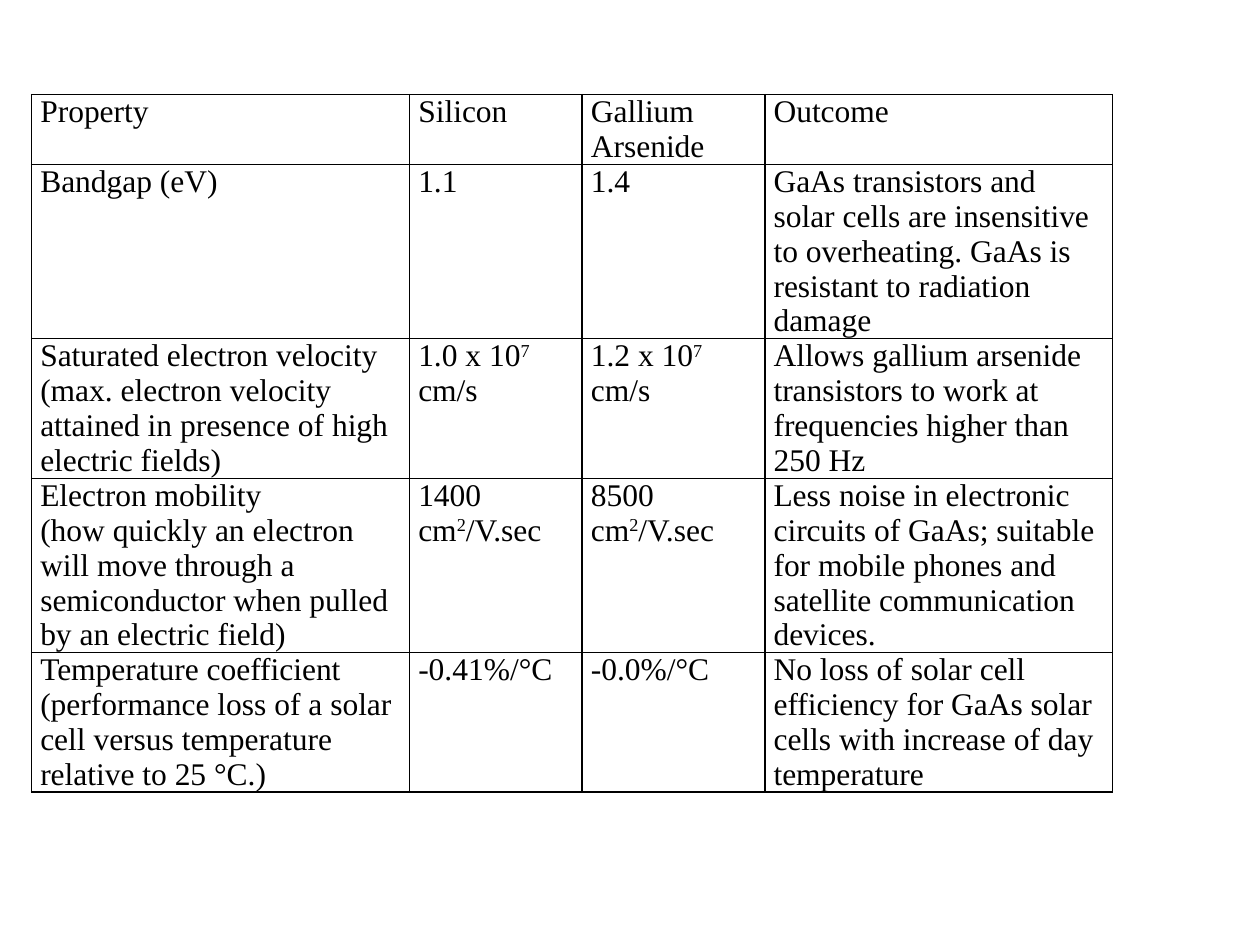
from typing import NamedTuple

from lxml import etree
from pptx import Presentation
from pptx.dml import color as dml
from pptx.oxml import ns
from pptx.util import Inches, Pt

FACE = "Times New Roman"
INK = "000000"
COLS = (3, 1.37, 1.45, 2.76)


class Row(NamedTuple):
    height: float
    name: str
    si: str
    gaas: str
    result: str


# "^" encloses raised text, a line break starts a new paragraph
ROWS = (
    Row(0.54, "Property", "Silicon", "Gallium Arsenide", "Outcome"),
    Row(1.35, "Bandgap (eV)", "1.1", "1.4",
        "GaAs transistors and solar cells are insensitive to overheating. "
        "GaAs is resistant to radiation damage"),
    Row(1.08, "Saturated electron velocity\n(max. electron velocity attained "
        "in presence of high electric fields)",
        "1.0 x 10^7 ^cm/s", "1.2 x 10^7 ^cm/s",
        "Allows gallium arsenide transistors to work at frequencies "
        "higher than 250 Hz"),
    Row(1.35, "Electron mobility\n(how quickly an electron will move through "
        "a semiconductor when pulled by an electric field)",
        "1400 cm^2^/V.sec", "8500 cm^2^/V.sec",
        "Less noise in electronic circuits of GaAs; suitable for mobile "
        "phones and satellite communication devices."),
    Row(1.08, "Temperature coefficient\n(performance loss of a solar cell "
        "versus temperature relative to 25 °C.)",
        "-0.41%/°C", "-0.0%/°C",
        "No loss of solar cell efficiency for GaAs solar cells with "
        "increase of day temperature"),
)


def rgb(code: str) -> dml.RGBColor:
    return dml.RGBColor.from_string(code)


def write(para, line: str) -> None:
    """Fill a paragraph, raising every part between carets."""
    font = para.font
    font.name, font.size = FACE, Pt(18)
    font.color.rgb = rgb(INK)
    for i, part in enumerate(line.split("^")):
        run = para.add_run()
        run.text = part
        if i % 2:
            run.font._element.set("baseline", "30000")


def frame(cell) -> None:
    """Give a cell thin borders on all four sides."""
    props = cell._tc.get_or_add_tcPr()
    for i, side in enumerate(("lnL", "lnR", "lnT", "lnB")):
        line = etree.Element(ns.qn(f"a:{side}"), w=str(Pt(1)))
        fill = etree.SubElement(line, ns.qn("a:solidFill"))
        etree.SubElement(fill, ns.qn("a:srgbClr"), val=INK)
        props.insert(i, line)


def fill_cell(cell, words: str) -> None:
    cell.margin_left = cell.margin_right = Inches(0.07)
    cell.margin_top = cell.margin_bottom = 0
    cell.fill.background()
    frame(cell)
    box = cell.text_frame
    for i, line in enumerate(words.split("\n")):
        write(box.add_paragraph() if i else box.paragraphs[0], line)


def main() -> None:
    deck = Presentation()
    deck.slide_width, deck.slide_height = Inches(10), Inches(7.5)
    slide = deck.slides.add_slide(deck.slide_layouts[6])

    # Comparison table
    table = slide.shapes.add_table(
        len(ROWS), len(COLS), Inches(0.25), Inches(0.75),
        Inches(sum(COLS)), Inches(sum(row.height for row in ROWS))).table
    table.first_row = table.horz_banding = False
    for col, width in zip(table.columns, COLS):
        col.width = Inches(width)
    for line, row in zip(table.rows, ROWS):
        line.height = Inches(row.height)
        for cell, words in zip(line.cells, row[1:]):
            fill_cell(cell, words)

    deck.save("out.pptx")


if __name__ == "__main__":
    main()
